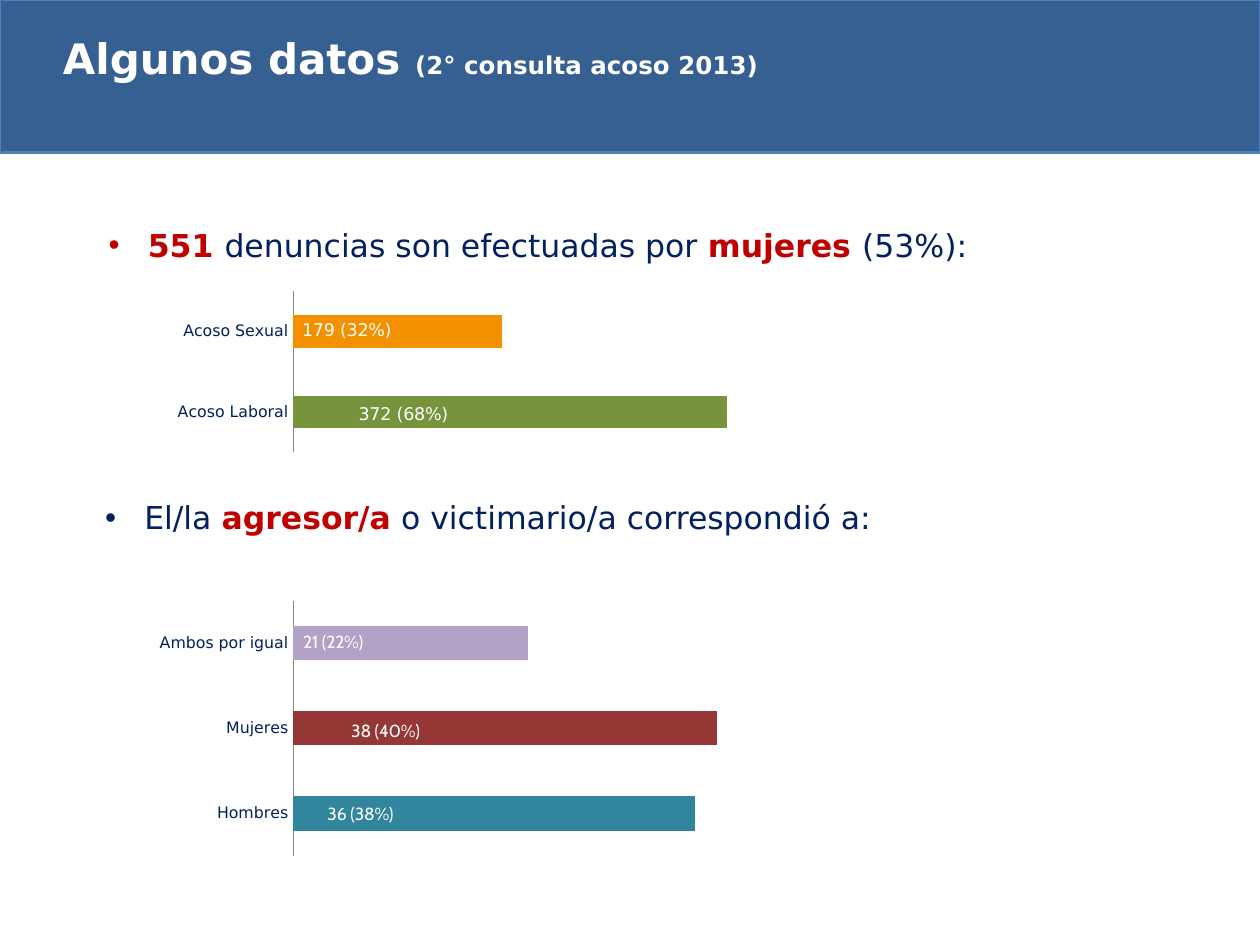
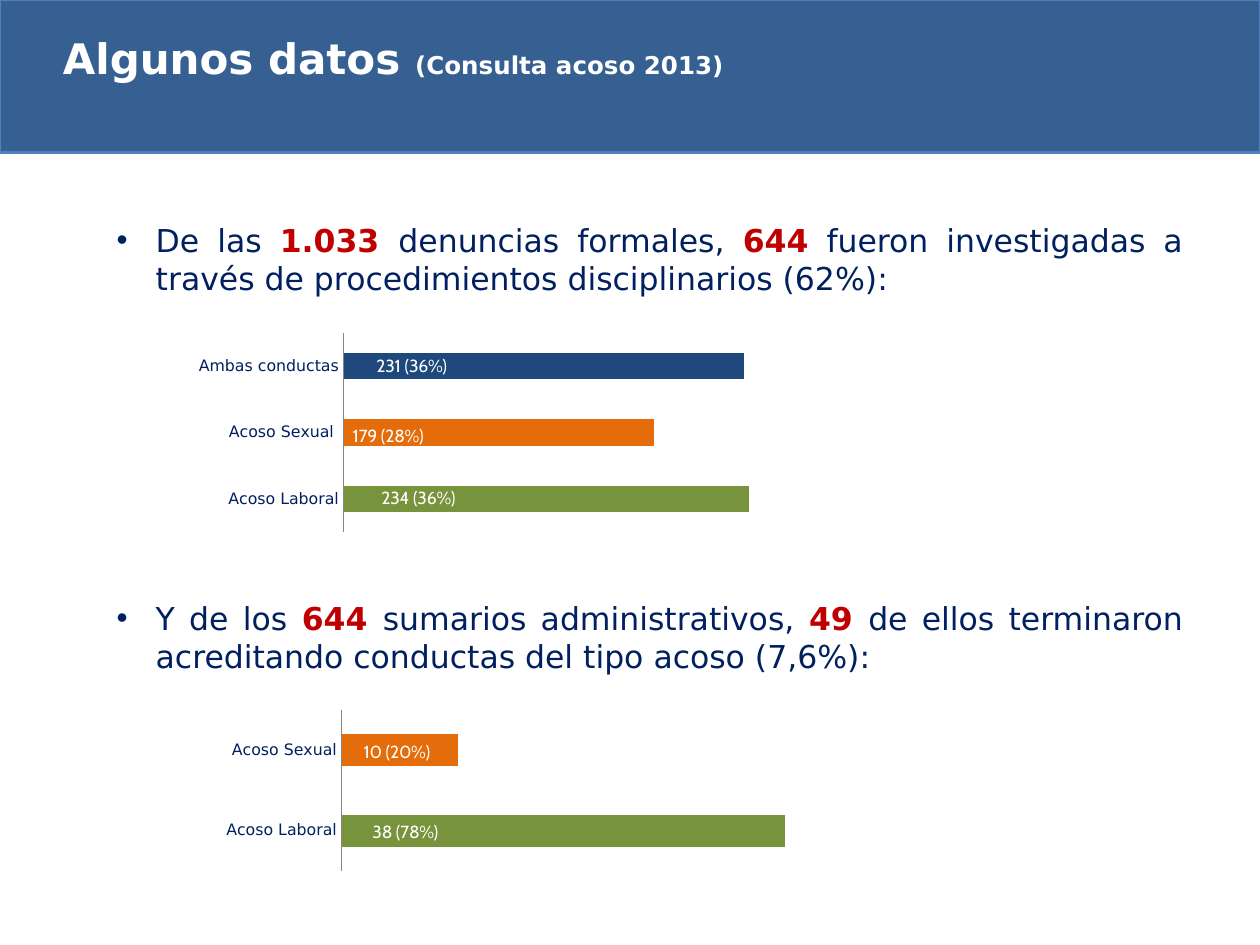
import lxml.etree
import pptx
import pptx.chart.data
import pptx.dml.color
import pptx.enum.chart
import pptx.enum.shapes
import pptx.enum.text
import pptx.oxml
import pptx.oxml.ns
import pptx.util

Cm = pptx.util.Cm
Pt = pptx.util.Pt
RGB = pptx.dml.color.RGBColor
qn = pptx.oxml.ns.qn

WHITE = RGB(0xFF, 0xFF, 0xFF)
BAND = RGB(0x37, 0x60, 0x92)
EDGE = RGB(0x4F, 0x81, 0xBD)
NAVY = RGB(0x00, 0x20, 0x60)
RED = RGB(0xC0, 0x00, 0x00)
GRAY = RGB(0x86, 0x86, 0x86)
GREEN = RGB(0x77, 0x93, 0x3C)
AMBER = RGB(0xF2, 0x90, 0x00)
ORANGE = RGB(0xE4, 0x6C, 0x0A)
TEAL = RGB(0x31, 0x85, 0x9C)
WINE = RGB(0x95, 0x37, 0x35)
LILAC = RGB(0xB3, 0xA2, 0xC7)
BLUE = RGB(0x1F, 0x49, 0x7D)

SANS = "DejaVu Sans"
CABIN = "Cabin"
PLOT_TOP = 0.39
C15 = "http://schemas.microsoft.com/office/drawing/2012/chart"
LABEL_EXT = "{CE6537A1-D6FC-4f65-9D91-7224C49458BB}"


def style(font, size, color, bold=False, name=SANS):
    font.name = name
    font.size = Pt(size)
    font.bold = bold
    font.color.rgb = color


class Deck:
    def __init__(self):
        self.file = pptx.Presentation()
        self.file.slide_width = Cm(25.4)
        self.file.slide_height = Cm(19.05)
        self.slide = None

    def start(self, note):
        """Add a slide with the top band and its title."""
        self.slide = self.file.slides.add_slide(self.file.slide_layouts[6])
        band = self.slide.shapes.add_shape(
            pptx.enum.shapes.MSO_SHAPE.RECTANGLE, 0, 0, Cm(25.4), Cm(3.08))
        band.shadow.inherit = False
        band.fill.solid()
        band.fill.fore_color.rgb = BAND
        band.line.color.rgb = EDGE
        band.line.width = Pt(1.5)
        line = self.text(1.02, 0.53, 23.8, 1.28)
        for words, size in (("Algunos datos ", 24), (note, 14)):
            self.run(line, words, size, WHITE, True)

    def text(self, left, top, width, height):
        box = self.slide.shapes.add_textbox(
            Cm(left), Cm(top), Cm(width), Cm(height))
        box.text_frame.word_wrap = True
        return box.text_frame.paragraphs[0]

    def run(self, line, words, size, color, bold):
        run = line.add_run()
        run.text = words
        style(run.font, size, color, bold)

    def bullet(self, left, top, width, height, parts):
        """Write one bullet; every second part, from index 1, is a red key."""
        line = self.text(left, top, width, height)
        line.alignment = pptx.enum.text.PP_ALIGN.JUSTIFY
        props = line._p.get_or_add_pPr()
        props.set("marL", str(Cm(0.79)))
        props.set("indent", str(Cm(-0.79)))
        lxml.etree.SubElement(props, qn("a:buFont")).set("typeface", "Arial")
        lxml.etree.SubElement(props, qn("a:buChar")).set("char", "•")
        for index, words in enumerate(parts):
            key = index % 2 == 1
            if words:
                self.run(line, words, 18, RED if key else NAVY, key)

    def bars(self, frame, plot, top, rows, face=CABIN):
        """Draw a bar chart.

        frame: left, top, width, height; plot: left, width, height (cm);
        top: axis maximum; rows, from the bottom up: category, value,
        label, colour, label distance from the axis and drop (cm).
        """
        data = pptx.chart.data.CategoryChartData()
        data.categories = [row[0] for row in rows]
        data.add_series("Series 1", [row[1] for row in rows])
        chart = self.slide.shapes.add_chart(
            pptx.enum.chart.XL_CHART_TYPE.BAR_CLUSTERED,
            *map(Cm, frame), data).chart
        chart.has_legend = False
        chart.has_title = False
        style(chart.font, 10, NAVY, name=face)
        self.axes(chart, top)

        wide, high = frame[2:]
        left, span, tall = plot
        self.place(chart._chartSpace.chart.plotArea, 0, {
            "layoutTarget": "inner", "xMode": "edge", "yMode": "edge",
            "x": left / wide, "y": PLOT_TOP / high,
            "w": span / wide, "h": tall / high})

        body = chart.plots[0]
        body.gap_width = 150
        body.overlap = -25
        body.vary_by_categories = False
        series = body.series[0]
        for index, (_, value, words, color, gap, drop) in enumerate(rows):
            point = series.points[index]
            point.format.fill.solid()
            point.format.fill.fore_color.rgb = color
            label = point.data_label
            label.text_frame.text = words
            for run in label.text_frame.paragraphs[0].runs:
                style(run.font, 10, WHITE, name=face)
            label.position = pptx.enum.chart.XL_LABEL_POSITION.OUTSIDE_END
            shift = gap - span * value / top
            self.place(label._dLbl, 1, {"x": shift / wide, "y": drop / high})
        series.data_labels.show_value = True
        self.unlead(series.data_labels._element)

    def unlead(self, labels):
        """Turn off the lines that join moved labels to their bars."""
        for old in labels.findall(qn("c:showLeaderLines")):
            old.set("val", "0")
        extras = lxml.etree.SubElement(labels, qn("c:extLst"))
        extra = lxml.etree.SubElement(
            extras, qn("c:ext"), nsmap={"c15": C15}, uri=LABEL_EXT)
        lead = lxml.etree.SubElement(extra, f"{{{C15}}}showLeaderLines")
        lead.set("val", "0")

    def axes(self, chart, top):
        none = pptx.enum.chart.XL_TICK_MARK.NONE
        side = chart.category_axis
        side.major_tick_mark = none
        side.minor_tick_mark = none
        side.has_major_gridlines = False
        side.format.line.color.rgb = GRAY
        side.format.line.width = Pt(0.75)
        style(side.tick_labels.font, 9, NAVY)
        scale = chart.value_axis
        scale.minimum_scale = 0
        scale.maximum_scale = top
        scale.has_major_gridlines = False
        scale.visible = False

    def place(self, host, index, values):
        """Give a chart part a manual layout, as its child at index."""
        for old in host.findall(qn("c:layout")):
            host.remove(old)
        layout = lxml.etree.Element(qn("c:layout"))
        manual = lxml.etree.SubElement(layout, qn("c:manualLayout"))
        for name, value in values.items():
            if not isinstance(value, str):
                value = f"{value:.4f}"
            lxml.etree.SubElement(manual, qn("c:" + name)).set("val", value)
        host.insert(index, layout)


def main():
    deck = Deck()

    deck.start("(2° consulta acoso 2013)")
    deck.bullet(1.94, 4.43, 19.91, 1.02, [
        "", "551 ", "denuncias son efectuadas por ", "mujeres ", "(53%):"])
    deck.bars((3.1, 5.48, 12.7, 7.62), (2.81, 9.4, 3.25), 400, [
        ("Acoso Laboral", 372, "372 (68%)", GREEN, 1.22, 0.05),
        ("Acoso Sexual", 179, "179 (32%)", AMBER, 0.08, -0.02)], SANS)
    deck.bullet(1.87, 9.92, 19.91, 1.02, [
        "El/la ", "agresor/a", " o victimario/a correspondió a:"])
    deck.bars((2.49, 11.72, 12.7, 7), (3.42, 9, 5.15), 40, [
        ("Hombres", 36, "36 (38%)", TEAL, 0.59, 0),
        ("Mujeres", 38, "38 (40%)", WINE, 1.07, 0.06),
        ("Ambos por igual", 21, "21 (22%)", LILAC, 0.1, -0.02)])

    deck.start("(Consulta acoso 2013)")
    deck.bullet(2.1, 4.33, 22, 1.8, [
        "De las ", "1.033 ", "denuncias formales, ", "644",
        " fueron investigadas a través de procedimientos "
        "disciplinarios (62%):"])
    deck.bars((3.91, 6.32, 12.7, 7.62), (3.02, 8.74, 4.02), 250, [
        ("Acoso Laboral", 234, "234 (36%)", GREEN, 0.66, -0.02),
        ("Acoso Sexual ", 179, "179 (28%)", ORANGE, 0.08, 0.06),
        ("Ambas conductas", 231, "231 (36%)", BLUE, 0.56, 0)])
    deck.bullet(2.1, 11.95, 22, 1.8, [
        "Y de los ", "644 ", "sumarios administrativos, ", "49 ",
        "de ellos terminaron acreditando conductas del tipo acoso (7,6%): "])
    deck.bars((3.9, 13.92, 13.31, 5), (2.99, 9.4, 3.25), 40, [
        ("Acoso Laboral", 38, "38 (78%)", GREEN, 0.52, 0.03),
        ("Acoso Sexual", 10, "10 (20%) ", ORANGE, 0.34, 0.03)])

    deck.file.save("out.pptx")


if __name__ == "__main__":
    main()
